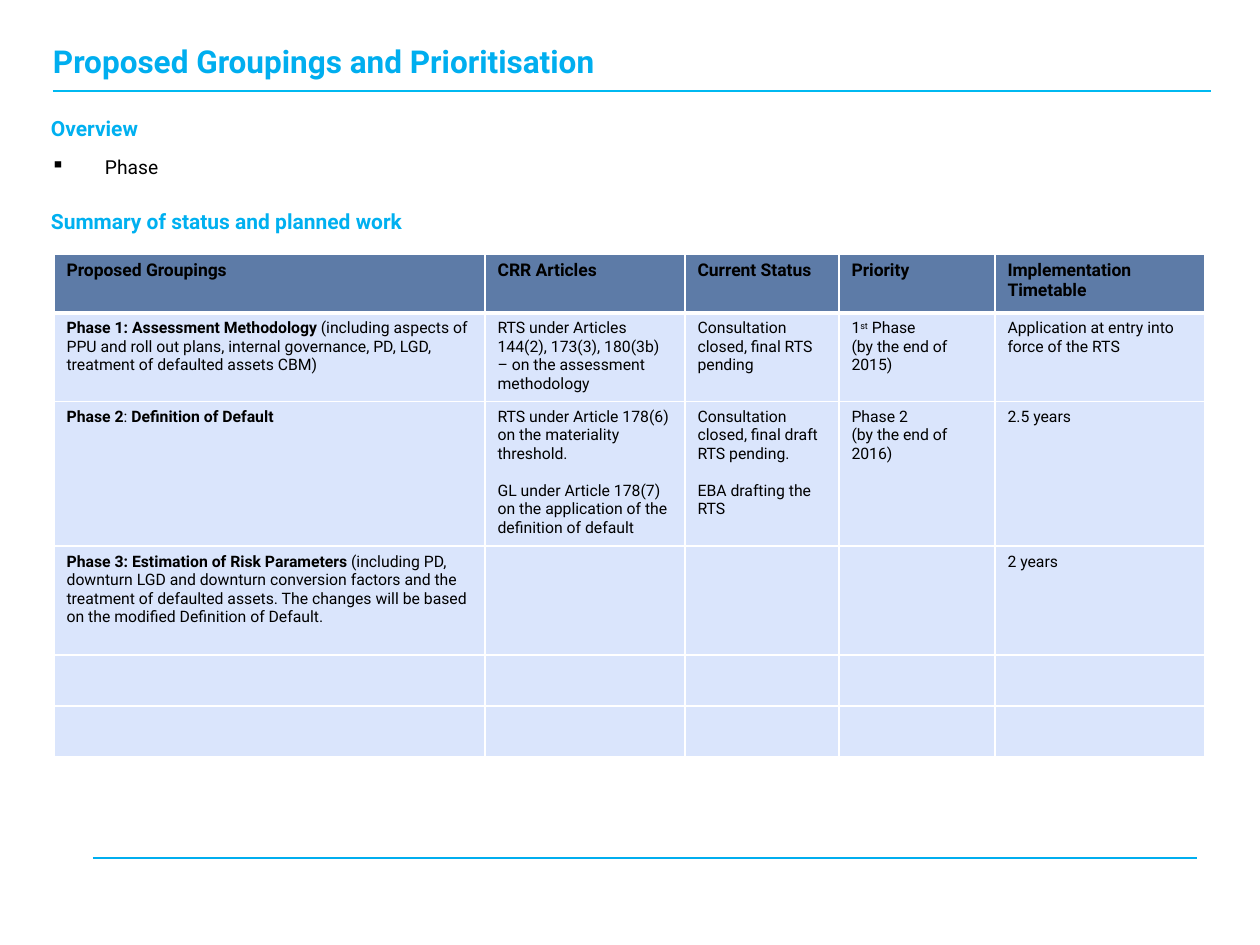
from lxml import etree
from pptx import Presentation
from pptx import util as u
from pptx.dml.color import RGBColor
from pptx.enum import shapes, text
from pptx.oxml import ns

SCALE = 914400 / 126  # EMU in one px
FONT = "Roboto"
TITLE_BLUE = RGBColor(0x00, 0xAE, 0xEF)
RULE_BLUE = RGBColor(0x00, 0xB9, 0xF1)
HEADING_BLUE = RGBColor(0x00, 0xB0, 0xF0)
HEADER_FILL = RGBColor(0x5D, 0x7B, 0xA7)
BODY_FILL = RGBColor(0xDA, 0xE5, 0xFC)
BLACK = RGBColor(0, 0, 0)


def px(*lengths):
    return [u.Emu(round(length * SCALE)) for length in lengths]


def style(font, size, color, bold=False):
    font.name = FONT
    font.size = u.Pt(size)
    font.bold = bold
    font.color.rgb = color


deck = Presentation()
deck.slide_width, deck.slide_height = px(1260, 945)
page = deck.slides.add_slide(deck.slide_layouts[5])

# Rules above and below the content
for left, right, y, color, width in [
    (93, 1197, 858, TITLE_BLUE, 1),
    (53, 1211, 91, RULE_BLUE, 1.5),
]:
    rule = page.shapes.add_connector(shapes.MSO_CONNECTOR.STRAIGHT, *px(left, y, right, y))
    rule.line.color.rgb = color
    rule.line.width = u.Pt(width)
    etree.SubElement(rule._element.spPr, ns.qn("a:effectLst"))

# Title
title = page.shapes.title
title.left, title.top, title.width, title.height = px(53, 41, 1188, 39)
overview = page.shapes.add_textbox(*px(51, 116, 1158, 126))
for box in (title, overview):
    frame = box.text_frame
    frame.margin_left = frame.margin_right = frame.margin_top = frame.margin_bottom = 0
    frame.word_wrap = True
title.text_frame.vertical_anchor = text.MSO_ANCHOR.MIDDLE
title.text_frame.text = "Proposed Groupings and Prioritisation"
title_para = title.text_frame.paragraphs[0]
title_para.alignment = text.PP_ALIGN.LEFT
style(title_para.runs[0].font, 18, TITLE_BLUE, True)

# Overview, bullet and table heading
overview.text_frame.text = "Overview\nPhase\nSummary of status and planned work"
heading, bullet, summary = overview.text_frame.paragraphs
indent = px(54)[0]
properties = bullet._p.get_or_add_pPr()
properties.set("marL", str(indent))
properties.set("indent", str(-indent))
etree.SubElement(properties, ns.qn("a:buChar"), char="▪")
for para, before in ((heading, 0), (bullet, 5.3), (summary, 15)):
    para.space_before = u.Pt(before)
    para.space_after = u.Pt(2.6)
for para in (heading, summary):
    style(para.runs[0].font, 12, HEADING_BLUE, True)
style(bullet.runs[0].font, 11, BLACK)

# Table: *bold*, ^superscript^, one paragraph a line
column_widths = [431, 200, 154, 156, 210]
row_heights = [59, 87, 142, 109, 51, 51]
rows = [
    ["*Proposed Groupings*", "*CRR Articles*", "*Current Status*", "*Priority*",
     "*Implementation Timetable*"],
    ["*Phase 1: Assessment Methodology *(including aspects of PPU and roll out plans, "
     "internal governance, PD, LGD, treatment of defaulted assets CBM)",
     "RTS under Articles 144(2), 173(3), 180(3b) – on the assessment methodology",
     "Consultation closed, final RTS pending",
     "1^st^ Phase\n(by the end of 2015)",
     "Application at entry into force of the RTS"],
    ["*Phase 2*: *Definition of Default*",
     "RTS under Article 178(6) on the materiality threshold.\n"
     "GL under Article 178(7) on the application of the definition of default",
     "Consultation closed, final draft RTS pending.\nEBA drafting the RTS",
     "Phase 2\n(by the end of 2016)",
     "2.5 years"],
    ["*Phase 3: Estimation of Risk Parameters *(including PD, downturn LGD and downturn "
     "conversion factors and the treatment of defaulted assets. The changes will be based "
     "on the modified Definition of Default.", "", "", "", "2 years"],
    [""] * 5,
    [""] * 5,
]
table = page.shapes.add_table(
    len(rows), len(column_widths), *px(54, 254, sum(column_widths), sum(row_heights))).table
for column, width in zip(table.columns, px(*column_widths)):
    column.width = width
for row, height in zip(table.rows, px(*row_heights)):
    row.height = height

for r, row in enumerate(rows):
    for c, content in enumerate(row):
        cell = table.cell(r, c)

        # White borders, heavier under the header
        cell_properties = cell._tc.get_or_add_tcPr()
        for side in ("L", "R", "T", "B"):
            heavy = (r == 0 and side == "B") or (r == 1 and side == "T")
            border = etree.SubElement(
                cell_properties, ns.qn(f"a:ln{side}"), w=str(u.Pt(3 if heavy else 1)))
            fill = etree.SubElement(border, ns.qn("a:solidFill"))
            etree.SubElement(fill, ns.qn("a:srgbClr"), val="FFFFFF")
        cell.fill.solid()
        cell.fill.fore_color.rgb = HEADER_FILL if r == 0 else BODY_FILL

        # Cell text
        for i, line in enumerate(content.split("\n")):
            frame = cell.text_frame
            para = frame.add_paragraph() if i else frame.paragraphs[0]
            if i and c in (1, 2):
                para.space_before = u.Pt(10.5)
            para.font.size = u.Pt(9)
            mark = "^" if "^" in line else "*"
            for k, piece in enumerate(line.split(mark)):
                if not piece:
                    continue
                span = para.add_run()
                span.text = piece
                marked = k % 2 == 1
                style(span.font, 10 if r == 0 else 9, BLACK, marked and mark == "*")
                if marked and mark == "^":
                    span._r.get_or_add_rPr().set("baseline", "30000")

deck.save("out.pptx")
